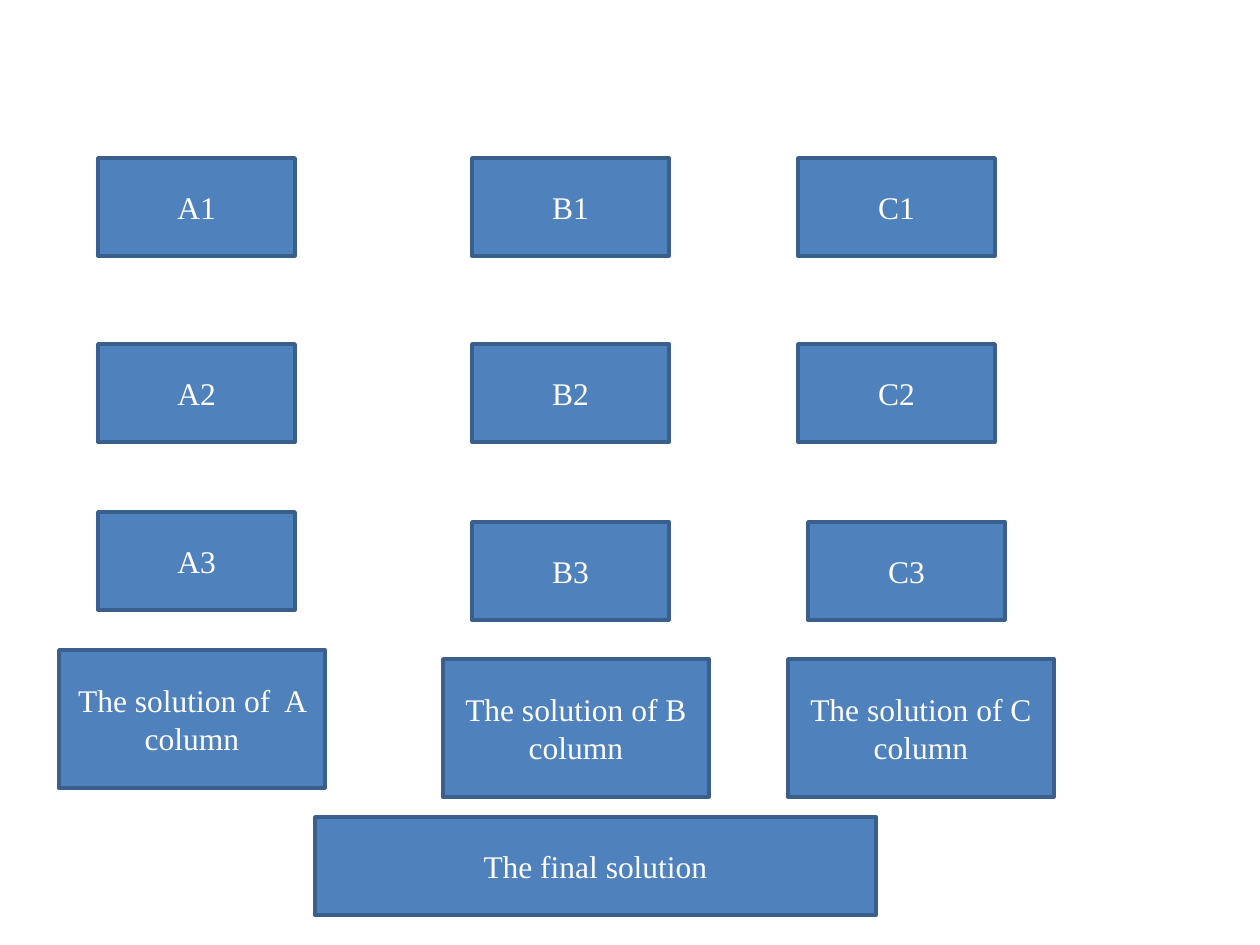
from dataclasses import dataclass

from pptx import Presentation
from pptx.dml.color import RGBColor
from pptx.enum.shapes import MSO_SHAPE
from pptx.enum.text import MSO_ANCHOR, PP_ALIGN
from pptx.util import Emu, Pt

RECTANGLE = MSO_SHAPE.RECTANGLE
MIDDLE = MSO_ANCHOR.MIDDLE
CENTER = PP_ALIGN.CENTER
EMU_PER_PX = 914400 / 126
BLANK_LAYOUT = 6


@dataclass(frozen=True)
class Theme:
    font: str = "Times New Roman"
    text_size: int = 18
    line_width: int = 2
    fill: RGBColor = RGBColor(0x4F, 0x81, 0xBD)
    line: RGBColor = RGBColor(0x3A, 0x5F, 0x8C)
    text: RGBColor = RGBColor(0xFF, 0xFF, 0xFF)


def px(length):
    return Emu(round(length * EMU_PER_PX))


class SlideBuilder:
    def __init__(self, slide, theme):
        self.slide = slide
        self.theme = theme

    def box(self, text, left, top, width, height):
        theme = self.theme
        shape = self.slide.shapes.add_shape(
            RECTANGLE, px(left), px(top), px(width), px(height)
        )
        shape.shadow.inherit = False
        shape.fill.solid()
        shape.fill.fore_color.rgb = theme.fill
        shape.line.color.rgb = theme.line
        shape.line.width = Pt(theme.line_width)
        frame = shape.text_frame
        frame.word_wrap = True
        frame.vertical_anchor = MIDDLE
        paragraph = frame.paragraphs[0]
        paragraph.alignment = CENTER
        run = paragraph.add_run()
        run.text = text
        run.font.name = theme.font
        run.font.size = Pt(theme.text_size)
        run.font.color.rgb = theme.text


def main():
    presentation = Presentation()
    presentation.slide_width = px(1260)
    presentation.slide_height = px(945)
    slide = presentation.slides.add_slide(presentation.slide_layouts[BLANK_LAYOUT])
    builder = SlideBuilder(slide, Theme())

    cell_size = (197, 98)
    column_lefts = {"A": 98, "B": 472, "C": 798}
    for row, top in enumerate((158, 344), start=1):
        for column, left in column_lefts.items():
            builder.box(f"{column}{row}", left, top, *cell_size)

    third_row = {"C3": (808, 522), "B3": (472, 522), "A3": (98, 512)}
    for name, position in third_row.items():
        builder.box(name, *position, *cell_size)

    builder.box("The final solution", 315, 817, 561, 98)

    column_solutions = {
        "The solution of  A column": (59, 650),
        "The solution of B column": (443, 659),
        "The solution of C column": (788, 659),
    }
    for text, position in column_solutions.items():
        builder.box(text, *position, 266, 138)

    presentation.save("out.pptx")


if __name__ == "__main__":
    main()
